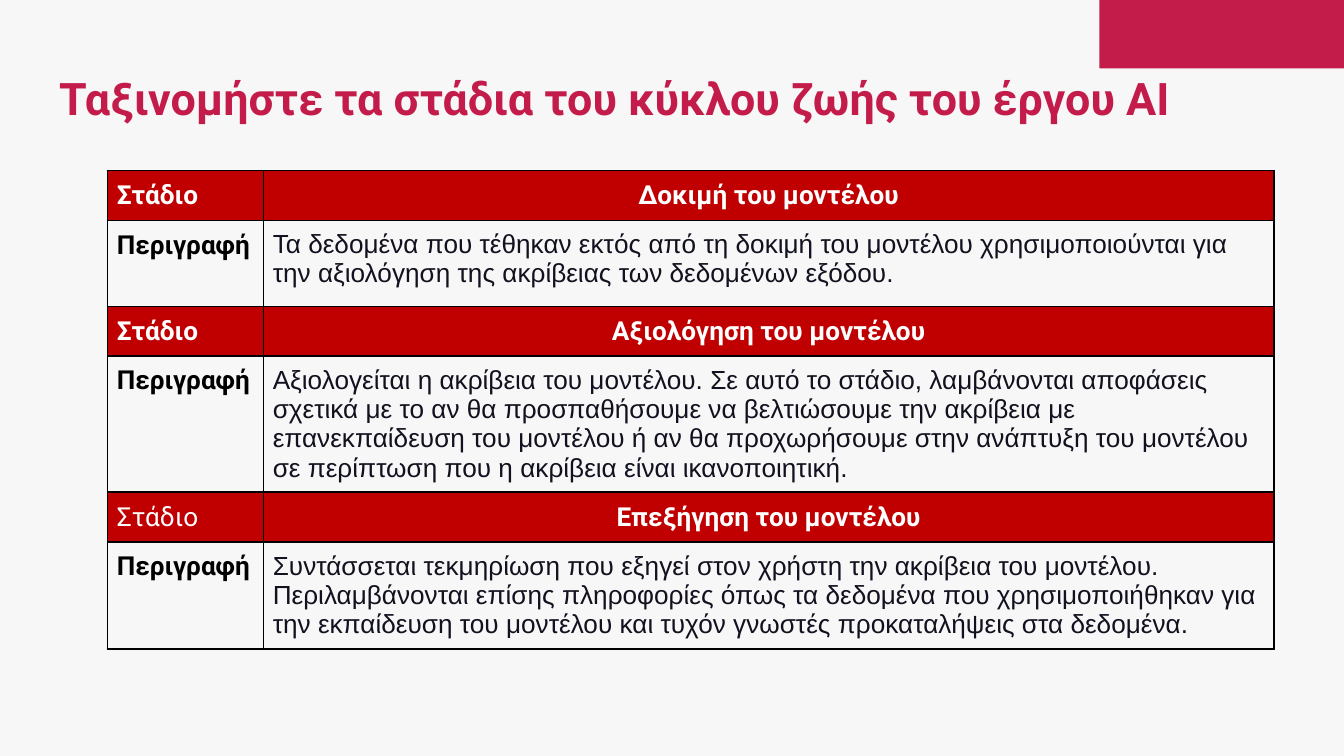
from dataclasses import dataclass

from lxml import etree
from pptx import Presentation
from pptx.dml.color import RGBColor
from pptx.enum.shapes import MSO_SHAPE
from pptx.enum.text import MSO_ANCHOR, PP_ALIGN
from pptx.oxml.ns import qn
from pptx.util import Inches, Pt

RECTANGLE = MSO_SHAPE.RECTANGLE
MIDDLE, TOP = MSO_ANCHOR.MIDDLE, MSO_ANCHOR.TOP
LEFT, CENTER = PP_ALIGN.LEFT, PP_ALIGN.CENTER
TITLE_ONLY = 5
MARGINS = ("margin_left", "margin_top", "margin_right", "margin_bottom")
SLIDE_WIDTH = Inches(10)
SLIDE_HEIGHT = SLIDE_WIDTH * 9 // 16  # widescreen


@dataclass(frozen=True)
class Theme:
    background: str = "F7F7F7"
    accent: str = "C31C4A"
    header: str = "C00000"
    header_text: str = "FFFFFF"
    label_text: str = "000000"
    body_text: str = "11111F"
    border: str = "000000"
    heading_font: str = "Roboto"
    body_font: str = "Arial"
    title_size: int = 24
    table_size: int = 14
    border_width: int = 1


@dataclass(frozen=True)
class Stage:
    name: str
    description: str
    description_height: float
    bold_label: bool = True


THEME = Theme()
HEADER_HEIGHT = 0.36
COLUMN_WIDTHS = (1.16, 7.52)
STAGES = (
    Stage("Δοκιμή του μοντέλου",
          "Τα δεδομένα που τέθηκαν εκτός από τη δοκιμή του μοντέλου "
          "χρησιμοποιούνται για την αξιολόγηση της ακρίβειας των δεδομένων εξόδου.",
          0.64),
    Stage("Αξιολόγηση του μοντέλου",
          "Αξιολογείται η ακρίβεια του μοντέλου. Σε αυτό το στάδιο, λαμβάνονται "
          "αποφάσεις σχετικά με το αν θα προσπαθήσουμε να βελτιώσουμε την ακρίβεια "
          "με επανεκπαίδευση του μοντέλου ή αν θα προχωρήσουμε στην ανάπτυξη του "
          "μοντέλου σε περίπτωση που η ακρίβεια είναι ικανοποιητική.",
          0.64),
    Stage("Επεξήγηση του μοντέλου",
          "Συντάσσεται τεκμηρίωση που εξηγεί στον χρήστη την ακρίβεια του μοντέλου. "
          "Περιλαμβάνονται επίσης πληροφορίες όπως τα δεδομένα που χρησιμοποιήθηκαν "
          "για την εκπαίδευση του μοντέλου και τυχόν γνωστές προκαταλήψεις στα δεδομένα.",
          0.78, bold_label=False),
)


def apply_format(target, values: dict) -> None:
    for attribute, value in values.items():
        setattr(target, attribute, value)


def write_text(frame, text: str, font: str, size: int, color: str,
               bold: bool, align=LEFT) -> None:
    paragraph = frame.paragraphs[0]
    paragraph.alignment = align
    run = paragraph.add_run()
    run.text = text
    apply_format(run.font, {"name": font, "size": Pt(size), "bold": bold})
    run.font.color.rgb = RGBColor.from_string(color)


def add_borders(cell) -> None:
    properties = cell._tc.get_or_add_tcPr()
    for side in ("a:lnL", "a:lnR", "a:lnT", "a:lnB"):
        line = etree.SubElement(properties, qn(side), w=str(Pt(THEME.border_width)))
        fill = etree.SubElement(line, qn("a:solidFill"))
        etree.SubElement(fill, qn("a:srgbClr"), val=THEME.border)


def fill_cell(cell, text: str, color: str, font: str = THEME.heading_font,
              bold: bool = True, align=LEFT, background: str | None = None) -> None:
    add_borders(cell)
    apply_format(cell, dict.fromkeys(MARGINS, Inches(0.07)))
    cell.vertical_anchor = TOP
    if background:
        cell.fill.solid()
        cell.fill.fore_color.rgb = RGBColor.from_string(background)
    else:
        cell.fill.background()
    write_text(cell.text_frame, text, font, THEME.table_size, color, bold, align)


def add_corner_block(slide) -> None:
    block = slide.shapes.add_shape(RECTANGLE, Inches(8.18), 0, Inches(1.82), Inches(0.51))
    block.shadow.inherit = False
    block.fill.solid()
    block.fill.fore_color.rgb = RGBColor.from_string(THEME.accent)
    block.line.fill.background()
    slide.shapes._spTree.insert(2, block._element)  # behind the title


def add_title(slide, text: str) -> None:
    title = slide.shapes.title
    apply_format(title, {"left": Inches(0.34), "top": Inches(0.34),
                         "width": Inches(9.32), "height": Inches(0.77)})
    apply_format(title.text_frame, dict.fromkeys(MARGINS, Inches(0.1)))
    apply_format(title.text_frame, {"vertical_anchor": MIDDLE, "word_wrap": True})
    write_text(title.text_frame, text, THEME.heading_font, THEME.title_size,
               THEME.accent, True)


def add_stage_table(slide, stages: tuple[Stage, ...]) -> None:
    heights = [h for stage in stages for h in (HEADER_HEIGHT, stage.description_height)]
    table = slide.shapes.add_table(
        len(heights), len(COLUMN_WIDTHS), Inches(0.8), Inches(1.27),
        Inches(sum(COLUMN_WIDTHS)), Inches(sum(heights))).table
    apply_format(table, {"first_row": False, "horz_banding": False})
    for column, width in zip(table.columns, COLUMN_WIDTHS):
        column.width = Inches(width)
    for row, height in zip(table.rows, heights):
        row.height = Inches(height)

    for index, stage in enumerate(stages):
        header, detail = 2 * index, 2 * index + 1
        fill_cell(table.cell(header, 0), "Στάδιο", THEME.header_text,
                  bold=stage.bold_label, background=THEME.header)
        fill_cell(table.cell(header, 1), stage.name, THEME.header_text,
                  align=CENTER, background=THEME.header)
        fill_cell(table.cell(detail, 0), "Περιγραφή", THEME.label_text)
        fill_cell(table.cell(detail, 1), stage.description, THEME.body_text,
                  font=THEME.body_font, bold=False)


def main() -> None:
    presentation = Presentation()
    apply_format(presentation, {"slide_width": SLIDE_WIDTH, "slide_height": SLIDE_HEIGHT})
    slide = presentation.slides.add_slide(presentation.slide_layouts[TITLE_ONLY])

    # Background and corner decoration
    slide.background.fill.solid()
    slide.background.fill.fore_color.rgb = RGBColor.from_string(THEME.background)
    add_corner_block(slide)

    # Title and life-cycle stages
    add_title(slide, "Ταξινομήστε τα στάδια του κύκλου ζωής του έργου AI")
    add_stage_table(slide, STAGES)

    presentation.save("out.pptx")


if __name__ == "__main__":
    main()
